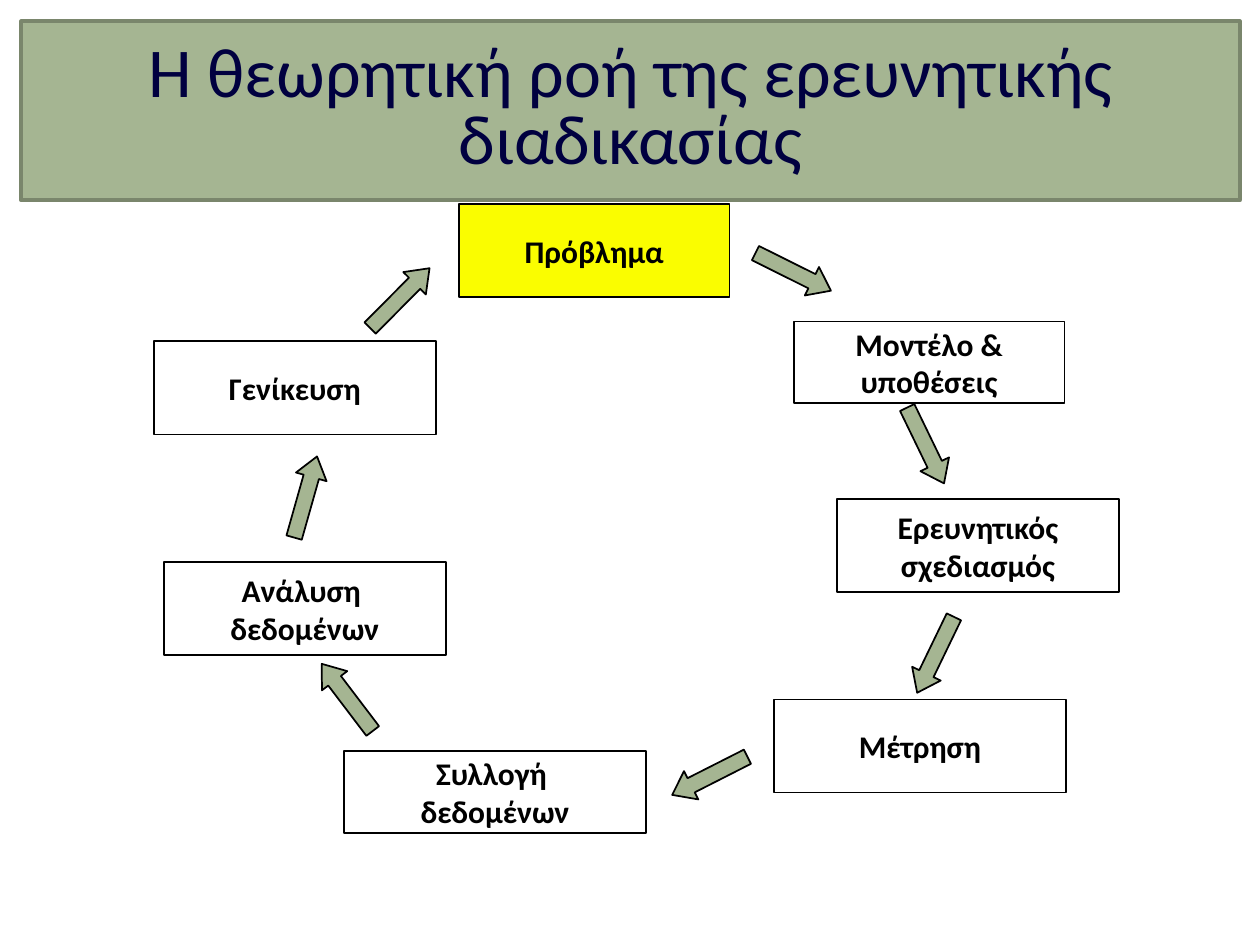
"""Build a slide that shows the research process as a ring of seven steps."""
from collections import namedtuple

from pptx import Presentation
from pptx.dml.color import RGBColor as RGB
from pptx.enum.shapes import MSO_SHAPE as Shape
from pptx.enum.text import MSO_ANCHOR as Anchor, MSO_AUTO_SIZE as Fit, PP_ALIGN as Align
from pptx.util import Cm, Pt

Theme = namedtuple("Theme", "font navy black white yellow green edge head body")
theme = Theme(
    font="Calibri",
    navy=RGB.from_string("000040"),
    black=RGB.from_string("000000"),
    white=RGB.from_string("FFFFFF"),
    yellow=RGB.from_string("FAFD00"),
    green=RGB.from_string("A5B592"),
    edge=RGB.from_string("7A866C"),
    head=Pt(40),
    body=Pt(18),
)


def paint(shape, fill, line, width):
    if fill is None:
        shape.fill.background()
    else:
        shape.fill.solid()
        shape.fill.fore_color.rgb = fill
    shape.line.color.rgb = line
    shape.line.width = Pt(width)


def write(shape, text, size, color, bold):
    frame = shape.text_frame
    frame.text = text
    frame.vertical_anchor = Anchor.MIDDLE
    frame.auto_size = Fit.NONE
    for par in frame.paragraphs:
        par.alignment = Align.CENTER
        for run in par.runs:
            run.font.name = theme.font
            run.font.size = size
            run.font.bold = bold
            run.font.color.rgb = color


deck = Presentation()
deck.slide_width, deck.slide_height = Cm(25.4), Cm(19.05)
slide = deck.slides.add_slide(deck.slide_layouts[5])

title = slide.shapes.title
title.left, title.top, title.width, title.height = Cm(0.43), Cm(0.43), Cm(24.56), Cm(3.61)
paint(title, theme.green, theme.edge, 2.25)
write(title, "Η θεωρητική ροή της ερευνητικής διαδικασίας", theme.head, theme.navy, False)
title.text_frame.paragraphs[0].line_spacing = 0.8

steps = [
    ("Πρόβλημα", 9.25, 4.11, 5.46, 1.88, theme.yellow),
    ("Μοντέλο &\nυποθέσεις", 16, 6.48, 5.46, 1.65, None),
    ("Ερευνητικός\nσχεδιασμός", 16.87, 10.06, 5.69, 1.88, theme.white),
    ("Μέτρηση", 15.6, 14.1, 5.89, 1.88, theme.white),
    ("Συλλογή \nδεδομένων", 6.93, 15.14, 6.1, 1.65, theme.white),
    ("Ανάλυση \nδεδομένων", 3.3, 11.33, 5.69, 1.88, theme.white),
    ("Γενίκευση", 3.1, 6.88, 5.69, 1.88, theme.white),
]
for text, left, top, width, height, fill in steps:
    box = slide.shapes.add_shape(Shape.RECTANGLE, Cm(left), Cm(top), Cm(width), Cm(height))
    box.shadow.inherit = False
    paint(box, fill, theme.black, 1)
    write(box, text, theme.body, theme.black, True)
    box.text_frame.word_wrap = False

turns = [
    (15.14, 5.16, 206.5),
    (17.81, 8.66, 244.1),
    (18.01, 12.88, 295.8),
    (13.46, 15.32, 333.1),
    (6.15, 13.74, 52.8),
    (5.31, 9.7, 105.8),
    (7.21, 5.69, 134.8),
]
for left, top, angle in turns:
    arrow = slide.shapes.add_shape(Shape.LEFT_ARROW, Cm(left), Cm(top), Cm(1.7), Cm(0.64))
    arrow.shadow.inherit = False
    arrow.adjustments[0], arrow.adjustments[1] = 0.5, 0.67
    arrow.rotation = angle
    paint(arrow, theme.green, theme.black, 1)

deck.save("out.pptx")
